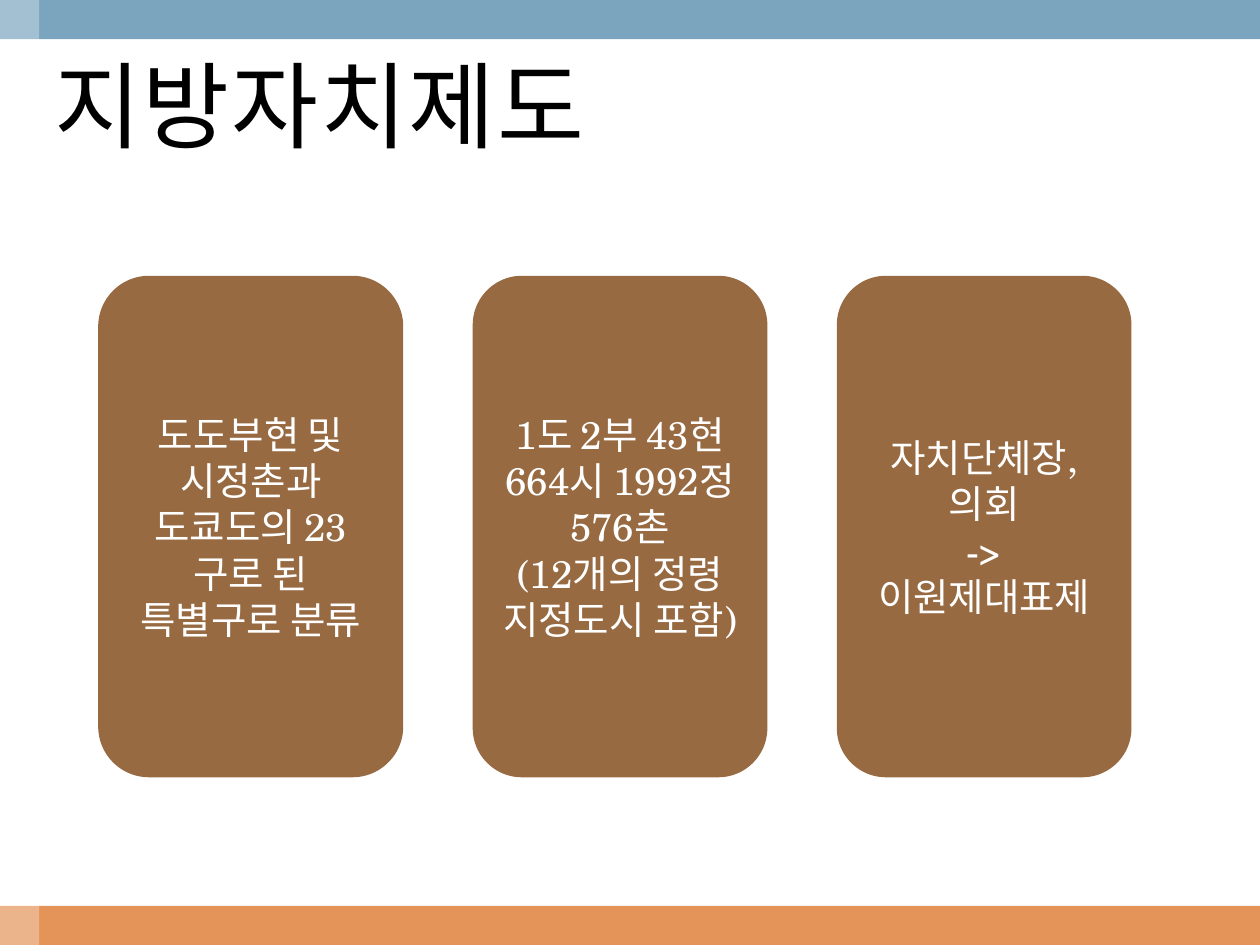
from lxml.etree import SubElement as Sub
from pptx import Presentation
from pptx.dml.color import RGBColor
from pptx.enum.shapes import MSO_SHAPE as Geo
from pptx.enum.text import MSO_ANCHOR as Anchor, MSO_AUTO_SIZE as Fit, PP_ALIGN as Align
from pptx.oxml.ns import qn
from pptx.util import Cm, Pt

WIDE, HIGH, BAND = 25.4, 19.05, 0.79
FONT = "TeX Gyre Schola"
CARDS = [
    (1.98, 6.15, ["도도부현 및 시정촌과 도쿄도의 23구로 된 특별구로 분류"]),
    (9.53, 5.94, ["1도 2부 43현 664시 1992정 576촌", "(12개의 정령 지정도시 포함)"]),
    (16.87, 5.94, ["자치단체장,", "의회", "->이원제대표제"]),
]


def color(code):
    """Turn a hex string into a colour."""
    return RGBColor.from_string(code)


def write(shape, lines, size=22, ink="FFFFFF", align=Align.CENTER, space=None):
    """Fill a shape with formatted paragraphs."""
    frame = shape.text_frame
    frame.word_wrap = True
    frame.auto_size = Fit.NONE
    frame.vertical_anchor = Anchor.MIDDLE
    frame.text = "\n".join(lines)
    for para in frame.paragraphs:
        para.alignment = align
        for run in para.runs:
            run.font.name = FONT
            run.font.size = Pt(size)
            run.font.color.rgb = color(ink)
            if space:
                run.font._element.set("spc", str(space))


def block(slide, box, fill, geo=Geo.RECTANGLE, alpha=None):
    """Draw a flat filled shape, with opacity in percent if given."""
    shape = slide.shapes.add_shape(geo, *map(Cm, box))
    shape.shadow.inherit = False
    shape.fill.solid()
    shape.fill.fore_color.rgb = color(fill)
    shape.line.fill.background()
    if alpha:
        tone = shape._element.spPr.find(".//" + qn("a:srgbClr"))
        Sub(tone, qn("a:alpha"), val=str(alpha * 1000))
    return shape


def frame(slide, box):
    """Draw the bands at top and bottom and the pale strip at left."""
    left, top, width, height = box
    block(slide, (left, top + height - BAND, width, BAND), "E49458")
    block(slide, (left, top, width, BAND), "7BA5BE")
    block(slide, (left, top, BAND, height), "FFFFFF", alpha=30)


def head(slide, box):
    """Place and format the title."""
    title = slide.shapes.title
    title.left, title.top, title.width, title.height = map(Cm, box)
    write(title, ["지방자치제도"], size=54, ink="000000", align=Align.LEFT, space=100)


def cards(slide, box):
    """Place the three rounded cards within the box."""
    left, top, _, height = box
    for shift, width, lines in CARDS:
        card = block(slide, (left + shift, top, width, height), "976A42",
                     Geo.FLOWCHART_ALTERNATE_PROCESS)
        write(card, lines)


def main():
    """Build and save the slide."""
    deck = Presentation()
    deck.slide_width, deck.slide_height = Cm(WIDE), Cm(HIGH)
    slide = deck.slides.add_slide(deck.slide_layouts[5])
    frame(slide, (0, 0, WIDE, HIGH))
    head(slide, (0.84, BAND, 23.77, 2.62))
    cards(slide, (0, 5.56, WIDE, 10.11))
    deck.save("out.pptx")


if __name__ == "__main__":
    main()
